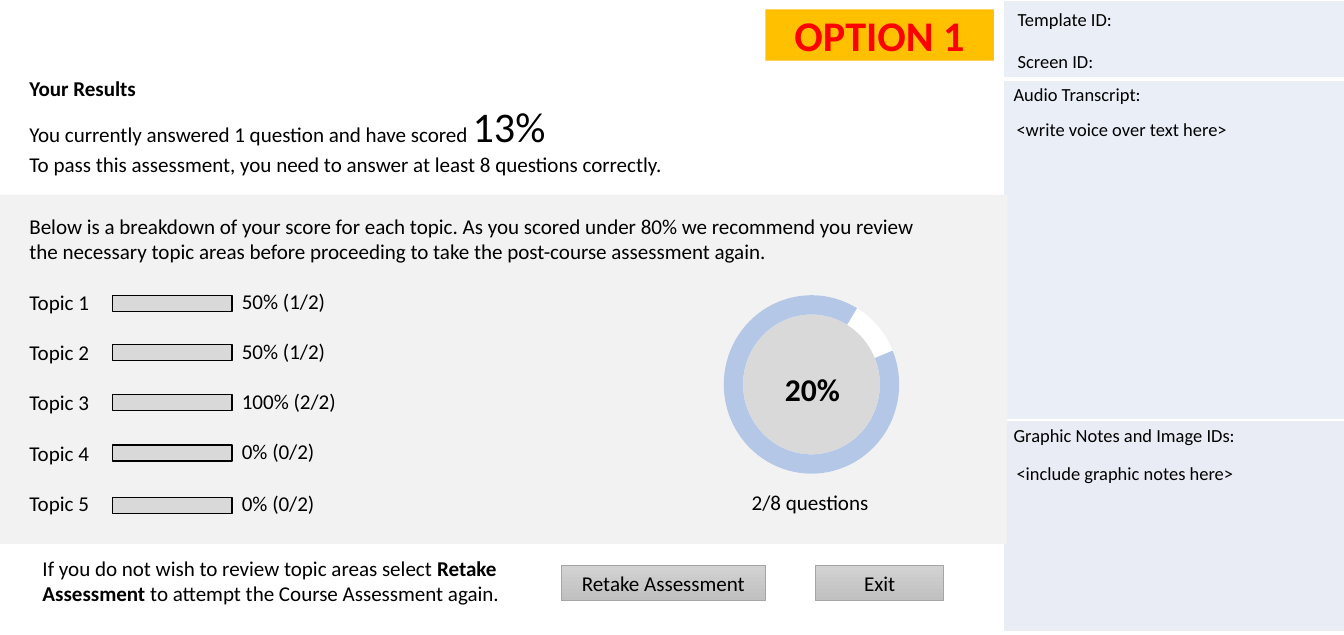
from dataclasses import dataclass

from lxml import etree
from pptx import Presentation
from pptx import util as u
from pptx.dml.color import RGBColor
from pptx.enum import shapes, text
from pptx.oxml.ns import qn

FONT = "Calibri"
BLACK, WHITE, RED, AMBER = "000000", "FFFFFF", "FF0000", "FFC000"
PANEL_GREY, BAR_GREY, RING_BLUE = "F2F2F2", "D9D9D9", "B4C7E7"
BUTTON_TOP, BUTTON_BOTTOM, BUTTON_EDGE = "D2D2D2", "C0C0C0", "A5A5A5"
NO_INSETS = (0, 0)
TEXT_INSETS = (7.2, 3.6)
TOP, MIDDLE = text.MSO_ANCHOR.TOP, text.MSO_ANCHOR.MIDDLE
LEFT, CENTER = text.PP_ALIGN.LEFT, text.PP_ALIGN.CENTER
SHAPE = shapes.MSO_SHAPE


@dataclass
class Box:
    left: float
    top: float
    width: float
    height: float

    def lengths(self) -> list[u.Pt]:
        return [u.Pt(v) for v in (self.left, self.top, self.width, self.height)]


@dataclass
class Run:
    words: str
    size: float = 16
    bold: bool = False
    color: str = BLACK


@dataclass
class Paragraph:
    runs: list[Run]
    space_before: float = 0


@dataclass
class Topic:
    name: str
    score: str
    bar_top: float


@dataclass
class SideRow:
    height: float
    heading: str
    fill: str
    bottom_border: float


@dataclass
class Button:
    label: str
    box: Box


TOPICS = [
    Topic("Topic 1", "50% (1/2)", 224),
    Topic("Topic 2", "50% (1/2)", 261.5),
    Topic("Topic 3", "100% (2/2)", 299.5),
    Topic("Topic 4", "0% (0/2)", 337.5),
    Topic("Topic 5", "0% (0/2)", 377.2),
]
SIDE_ROWS = [
    SideRow(59.8, "", "EAEFF7", 3),
    SideRow(258.8, "Audio Transcript:", "EAEFF7", 1),
    SideRow(160.9, "Graphic Notes and Image IDs:", "E9EBF5", 1),
]
SIDE_LABELS = [
    (Box(765.4, 34.6, 275, 24.2), "Screen ID:"),
    (Box(765.4, 2.9, 275, 24.2), "Template ID:"),
    (Box(764.6, 85.7, 256, 24.2), "<write voice over text here>"),
    (Box(764.6, 347, 256, 24.2), "<include graphic notes here>"),
]
BUTTONS = [
    Button("Retake Assessment", Box(426.2, 429.2, 154.8, 26.6)),
    Button("Exit", Box(619.2, 429.2, 97.2, 26.6)),
]


def rgb(color: str) -> RGBColor:
    return RGBColor.from_string(color)


def write(frame, paragraphs: list[Paragraph], align=LEFT, anchor=TOP, insets=NO_INSETS) -> None:
    frame.word_wrap = True
    frame.vertical_anchor = anchor
    frame.margin_left = frame.margin_right = u.Pt(insets[0])
    frame.margin_top = frame.margin_bottom = u.Pt(insets[1])
    for index, content in enumerate(paragraphs):
        paragraph = frame.paragraphs[0] if index == 0 else frame.add_paragraph()
        paragraph.alignment = align
        paragraph.space_before = u.Pt(content.space_before)
        for part in content.runs:
            run = paragraph.add_run()
            run.text = part.words
            run.font.name = FONT
            run.font.size = u.Pt(part.size)
            run.font.bold = part.bold
            run.font.color.rgb = rgb(part.color)


def add_text(slide, box: Box, paragraphs: list[Paragraph], align=LEFT, insets=NO_INSETS) -> None:
    frame = slide.shapes.add_textbox(*box.lengths()).text_frame
    write(frame, paragraphs, align, insets=insets)


def add_filled(target, kind, box: Box, fill: str, line: str = "", line_width: float = 1):
    """Add a preset shape to a slide or group; no line colour means no outline."""
    shape = target.shapes.add_shape(kind, *box.lengths())
    shape.shadow.inherit = False
    shape.fill.solid()
    shape.fill.fore_color.rgb = rgb(fill)
    if line:
        shape.line.color.rgb = rgb(line)
        shape.line.width = u.Pt(line_width)
    else:
        shape.line.fill.background()
    return shape


def add_cell_border(cell, side: str, width: float) -> None:
    border = etree.Element(qn(f"a:{side}"), w=str(u.Pt(width)))
    fill = etree.SubElement(border, qn("a:solidFill"))
    etree.SubElement(fill, qn("a:srgbClr"), val=WHITE)
    properties = cell._tc.get_or_add_tcPr()
    properties.insert(len(properties.findall("*")) - 1, border)


def add_side_panel(slide) -> None:
    box = Box(761.8, 0, 258.5, sum(row.height for row in SIDE_ROWS))
    table = slide.shapes.add_table(len(SIDE_ROWS), 1, *box.lengths()).table
    table.first_row = table.horz_banding = False
    top_border = 1
    for index, row in enumerate(SIDE_ROWS):
        table.rows[index].height = u.Pt(row.height)
        cell = table.cell(index, 0)
        cell.fill.solid()
        cell.fill.fore_color.rgb = rgb(row.fill)
        cell.margin_left = cell.margin_right = u.Pt(7.6)
        if row.heading:
            write(cell.text_frame, [Paragraph([Run(row.heading, 14)])], insets=(7.6, 3.6))
        borders = {"lnL": 1, "lnR": 1, "lnT": top_border, "lnB": row.bottom_border}
        for side, width in borders.items():
            add_cell_border(cell, side, width)
        top_border = row.bottom_border
    for label_box, words in SIDE_LABELS:
        add_text(slide, label_box, [Paragraph([Run(words, 14)])], insets=TEXT_INSETS)


def add_results(slide) -> None:
    add_text(slide, Box(22.3, 56.9, 686, 94.3), [
        Paragraph([Run("Your Results", bold=True)]),
        Paragraph([Run("You currently answered 1 question and have scored "), Run("13%", 32)]),
        Paragraph([Run("To pass this assessment, you need to answer at least 8 questions correctly.")]),
    ])
    breakdown = Run(
        "Below is a breakdown of your score for each topic. As you scored under 80% we recommend "
        "you review the necessary topic areas before proceeding to take the post-course assessment again."
    )
    topic_names = [Paragraph([Run(topic.name)], space_before=19) for topic in TOPICS]
    add_text(slide, Box(22.3, 162, 686, 44.6), [Paragraph([breakdown]), *topic_names])
    for topic in TOPICS:
        add_filled(slide, SHAPE.RECTANGLE, Box(85.5, topic.bar_top, 90.7, 12.2), BAR_GREY, BLACK)
        add_text(slide, Box(183.6, topic.bar_top - 5, 78.5, 22.3), [Paragraph([Run(topic.score)])])


def add_score_ring(slide) -> None:
    group = slide.shapes.add_group_shape()
    disc = add_filled(group, SHAPE.OVAL, Box(558, 236.9, 117.4, 115.9), BAR_GREY, BLACK)
    write(disc.text_frame, [Paragraph([Run("20%", 24, True)])], CENTER, MIDDLE)
    for start, color in ((180.64, WHITE), (202.44, RING_BLUE)):
        arc = add_filled(group, SHAPE.BLOCK_ARC, Box(549.4, 223.9, 133.2, 135.4), color)
        for index, value in enumerate((start, 180.53, 0.11)):
            arc.adjustments[index] = value
    add_text(slide, Box(549.4, 371.5, 131, 28.8), [Paragraph([Run("2/8 questions")])], CENTER)


def add_button(slide, button: Button) -> None:
    shape = add_filled(slide, SHAPE.RECTANGLE, button.box, BUTTON_TOP, BUTTON_EDGE, 0.5)
    shape.fill.gradient()
    shape.fill.gradient_angle = 270
    for stop, color in zip(shape.fill.gradient_stops, (BUTTON_TOP, BUTTON_BOTTOM)):
        stop.color.rgb = rgb(color)
    write(shape.text_frame, [Paragraph([Run(button.label)])], CENTER, MIDDLE, (0, 3.6))


def main() -> None:
    presentation = Presentation()
    presentation.slide_width, presentation.slide_height = u.Pt(1020.24), u.Pt(481.68)
    slide = presentation.slides.add_slide(presentation.slide_layouts[6])
    add_side_panel(slide)
    panel = add_filled(slide, SHAPE.ROUNDED_RECTANGLE, Box(0, 147.6, 764.6, 265), PANEL_GREY)
    panel.adjustments[0] = 0
    add_results(slide)
    add_text(slide, Box(25.2, 417.6, 401, 46.1), [Paragraph([
        Run("If you do not wish to review topic areas select "),
        Run("Retake Assessment ", bold=True),
        Run("to attempt the Course Assessment again."),
    ])], insets=TEXT_INSETS)
    option = add_filled(slide, SHAPE.RECTANGLE, Box(581, 7.2, 173.5, 38.9), AMBER)
    write(option.text_frame, [Paragraph([Run("OPTION 1", 32, True, RED)])], CENTER)
    for button in BUTTONS:
        add_button(slide, button)
    add_score_ring(slide)
    presentation.save("out.pptx")


if __name__ == "__main__":
    main()
